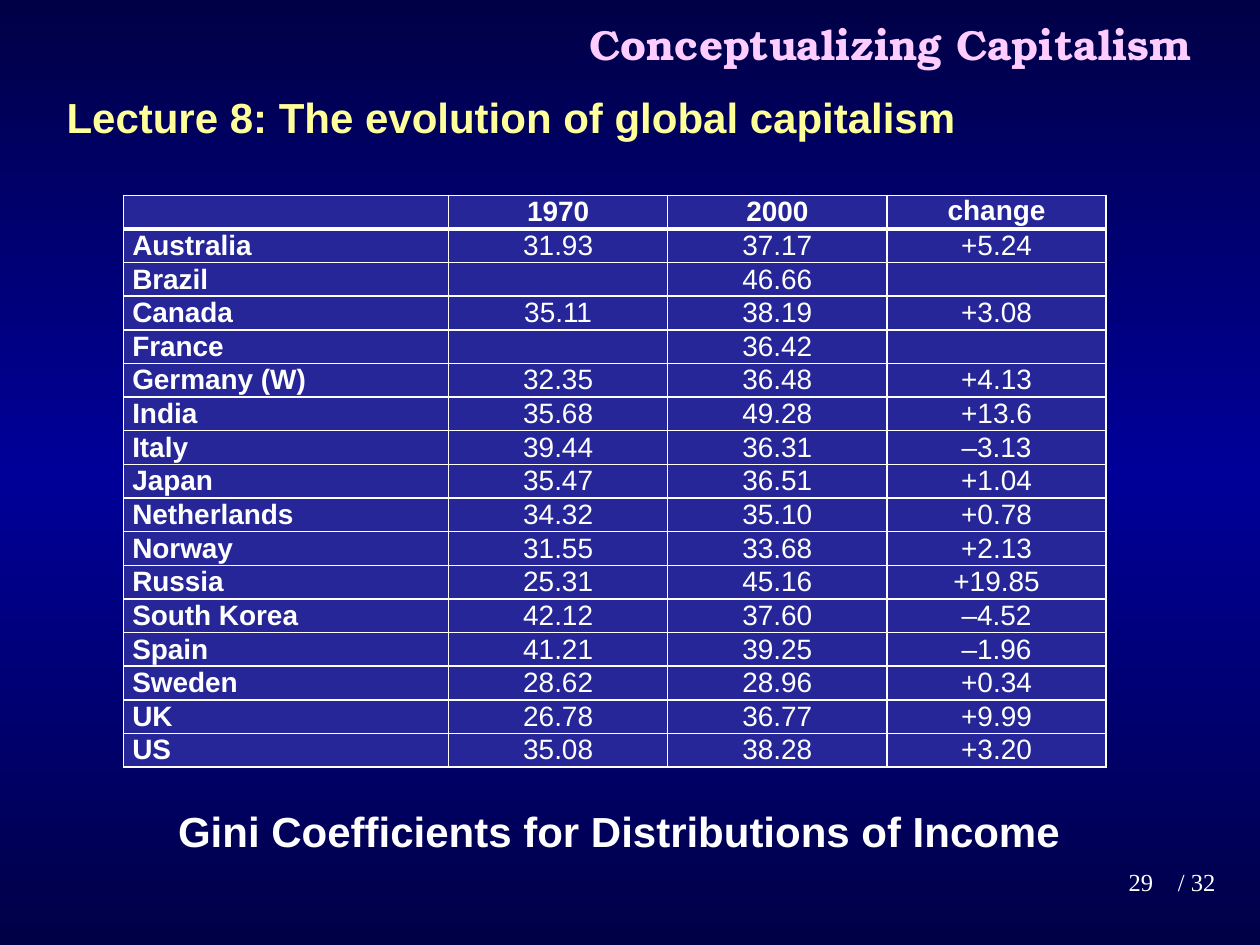
from copy import deepcopy
from pptx import Presentation, util as u
from pptx.dml.color import RGBColor
from pptx.enum import text
from pptx.oxml import parse_xml
from pptx.oxml.ns import nsdecls

THEME = {
    "dark": "000047", "mid": "000099", "cell": "262699",
    "pink": "FFCCFF", "gold": "FFFF99", "white": "FFFFFF",
    "head": 24, "body": 16, "page": 14,
    "serif": "TeX Gyre Bonum", "sans": "Arial", "roman": "Times New Roman",
}
LEFT, MID, RIGHT = (text.PP_ALIGN.LEFT, text.PP_ALIGN.CENTER,
                    text.PP_ALIGN.RIGHT)


def rgb(name):
    return RGBColor.from_string(THEME[name])


def write(frame, words, size, face, tint, bold, align, **gaps):
    para = frame.paragraphs[0]
    for key, val in {"alignment": align, **gaps}.items():
        setattr(para, key, val)
    if not words:
        para._p.get_or_add_endParaRPr().set("sz", str(THEME[size] * 100))
        return
    run = para.add_run()
    run.text = words
    look = {"size": u.Pt(THEME[size]), "name": THEME[face], "bold": bold}
    for key, val in look.items():
        setattr(run.font, key, val)
    run.font.color.rgb = rgb(tint)


deck = Presentation()
deck.slide_width, deck.slide_height = u.Inches(10), u.Inches(7.5)
slide = deck.slides.add_slide(deck.slide_layouts[5])

# Background: dark edges, lighter middle
fill = slide.background.fill
fill.gradient()
fill.gradient_angle = 90
stops = fill.gradient_stops
first, last = stops[0]._gs, stops[1]._gs
last.addprevious(deepcopy(first))
for stop, (spot, tint) in zip(fill.gradient_stops,
                              [(0, "dark"), (0.5, "mid"), (1, "dark")]):
    stop.position = spot
    stop.color.rgb = rgb(tint)

# Title
title = slide.shapes.title
place = {"left": 4.13, "top": 0.01, "width": 5.87, "height": 0.67}
for key, val in place.items():
    setattr(title, key, u.Inches(val))
title.text_frame.vertical_anchor = text.MSO_ANCHOR.MIDDLE
title.text_frame.auto_size = text.MSO_AUTO_SIZE.NONE
write(title.text_frame, "Conceptualizing Capitalism",
      "head", "serif", "pink", True, MID)

# Page number, lecture heading and table caption
notes = [
    ((8.39, 6.83, 0.86, 0.5), "29", "page", "roman", "white", False, RIGHT),
    ((9.25, 6.83, 0.75, 0.33), "/ 32", "page", "roman", "white", False, LEFT),
    ((0.43, 0.68, 7.8, 0.5), "Lecture 8: The evolution of global capitalism",
     "head", "sans", "gold", True, LEFT),
    ((1.14, 6.34, 7.64, 0.5), "Gini Coefficients for Distributions of Income ",
     "head", "sans", "white", True, MID),
]
for box, *look in notes:
    frame = slide.shapes.add_textbox(*map(u.Inches, box)).text_frame
    frame.word_wrap = True
    write(frame, *look)

# Table of Gini coefficients
rows = [
    ("", "1970", "2000", "change"),
    ("Australia", "31.93", "37.17", "+5.24"),
    ("Brazil", "", "46.66", ""),
    ("Canada", "35.11", "38.19", "+3.08"),
    ("France", "", "36.42", ""),
    ("Germany (W)", "32.35", "36.48", "+4.13"),
    ("India", "35.68", "49.28", "+13.6"),
    ("Italy", "39.44", "36.31", "–3.13"),
    ("Japan", "35.47", "36.51", "+1.04"),
    ("Netherlands", "34.32", "35.10", "+0.78"),
    ("Norway", "31.55", "33.68", "+2.13"),
    ("Russia", "25.31", "45.16", "+19.85"),
    ("South Korea", "42.12", "37.60", "–4.52"),
    ("Spain", "41.21", "39.25", "–1.96"),
    ("Sweden", "28.62", "28.96", "+0.34"),
    ("UK", "26.78", "36.77", "+9.99"),
    ("US", "35.08", "38.28", "+3.20"),
]
grid = slide.shapes.add_table(
    len(rows), 4, u.Inches(0.98), u.Inches(1.55),
    u.Inches(7.79), u.Inches(4.53)).table
grid.horz_banding = False
for col, wide in zip(grid.columns, (2.58, 1.74, 1.74, 1.74)):
    col.width = u.Inches(wide)

inset = {"margin_left": 0.07, "margin_right": 0.07,
         "margin_top": 0, "margin_bottom": 0}
for r, row in enumerate(rows):
    for c, words in enumerate(row):
        cell = grid.cell(r, c)
        for key, val in inset.items():
            setattr(cell, key, u.Inches(val))
        if words != "change":
            cell.vertical_anchor = text.MSO_ANCHOR.MIDDLE

        # Thin white borders, thick under the header
        props = cell._tc.get_or_add_tcPr()
        for side in "LRTB":
            thick = (r, side) in ((0, "B"), (1, "T"))
            props.append(parse_xml(
                f'<a:ln{side} {nsdecls("a")} w="{u.Pt(3 if thick else 1)}">'
                f'<a:solidFill><a:srgbClr val="{THEME["white"]}"/>'
                f'</a:solidFill></a:ln{side}>'))
        cell.fill.solid()
        cell.fill.fore_color.rgb = rgb("cell")

        gaps = {"space_before": u.Pt(6), "space_after": u.Pt(6)}
        write(cell.text_frame, words, "body", "sans", "white",
              r == 0 or c == 0, MID if r == 0 or c else LEFT,
              **(gaps if r == 0 else {}))

deck.save("out.pptx")
